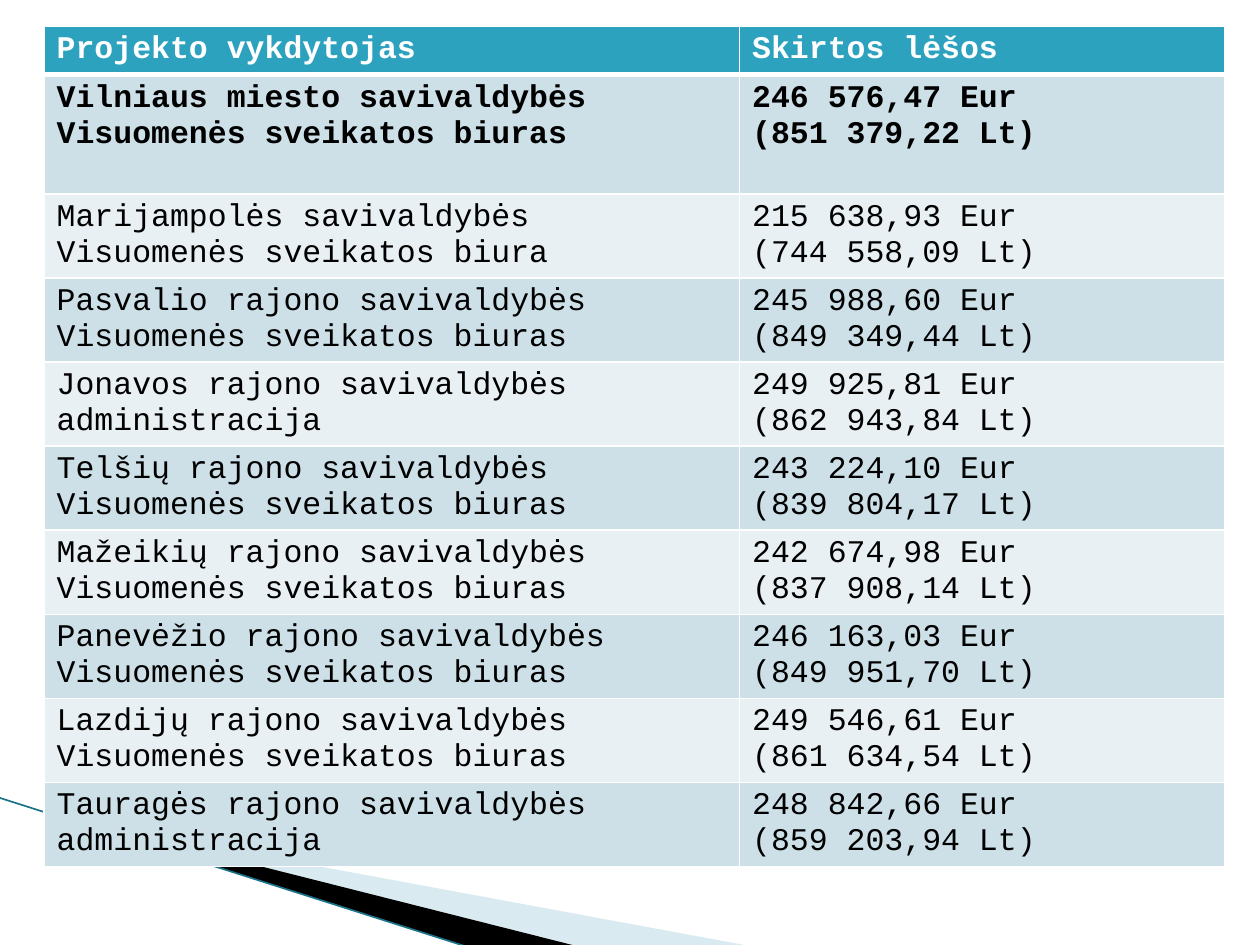
from lxml.etree import SubElement
from pptx import Presentation
from pptx.dml.color import RGBColor
from pptx.enum.shapes import MSO_CONNECTOR as Link
from pptx.oxml.ns import qn
from pptx.util import Inches, Pt

FONT = "Courier New"
HEAD, BANDS = "2DA2BF", ("CDE0E8", "E8F0F4")
WHITE, BLACK, PALE, TEAL = "FFFFFF", "000000", "A0CBDC", "1B7389"
BUREAU = "Visuomenės sveikatos biuras"

ROWS = [
    ("Projekto vykdytojas", "Skirtos lėšos"),
    (f"Vilniaus miesto savivaldybės \v{BUREAU}", "246 576,47 Eur\n(851 379,22 Lt)"),
    ("Marijampolės savivaldybės Visuomenės sveikatos biura",
     "215 638,93 Eur\n(744 558,09 Lt)"),
    (f"Pasvalio rajono savivaldybės {BUREAU}", "245 988,60 Eur\n(849 349,44 Lt)"),
    ("Jonavos rajono savivaldybės administracija", "249 925,81 Eur\n(862 943,84 Lt)"),
    (f"Telšių rajono savivaldybės\n{BUREAU}", "243 224,10 Eur\n(839 804,17 Lt)"),
    (f"Mažeikių rajono savivaldybės {BUREAU}", "242 674,98 Eur\n(837 908,14 Lt)"),
    (f"Panevėžio rajono savivaldybės {BUREAU}", "246 163,03 Eur\n(849 951,70 Lt)"),
    (f"Lazdijų rajono savivaldybės {BUREAU}", "249 546,61 Eur\n(861 634,54 Lt)"),
    ("Tauragės rajono savivaldybės administracija", "248 842,66 Eur\n(859 203,94 Lt)"),
]


def rgb(code):
    return RGBColor.from_string(code)


def write(frame, text, size=18, color=BLACK, bold=False):
    frame.text = text
    for para in frame.paragraphs:
        for run in para.runs:
            font = run.font
            font.name, font.size, font.bold = FONT, Pt(size), bold
            font.color.rgb = rgb(color)


def edge(cell, side, width):
    """Draw a white border on one side (L, R, T or B) of a cell."""
    props = cell._tc.get_or_add_tcPr()
    line = SubElement(props, qn(f"a:ln{side}"), w=str(Pt(width)))
    fill = SubElement(line, qn("a:solidFill"))
    SubElement(fill, qn("a:srgbClr"), val=WHITE)


class Page:
    """The current slide; lengths are percentages of its width and height."""

    def __init__(self, deck):
        self.wide, self.high = deck.slide_width, deck.slide_height
        self.slide = deck.slides.add_slide(deck.slide_layouts[6])
        self.shapes = self.slide.shapes
        back = self.slide.background.fill
        back.solid()
        back.fore_color.rgb = rgb(WHITE)

    def x(self, share):
        return round(self.wide * share / 100)

    def y(self, share):
        return round(self.high * share / 100)

    def wedge(self, points, color, alpha=100):
        spots = [(self.x(a), self.y(b)) for a, b in points]
        pen = self.shapes.build_freeform(*spots[0], scale=1.0)
        pen.add_line_segments(spots[1:], close=True)
        shape = pen.convert_to_shape()
        shape.shadow.inherit = False
        shape.line.fill.background()
        shape.fill.solid()
        shape.fill.fore_color.rgb = rgb(color)
        if alpha < 100:
            tone = shape._element.spPr.find(".//" + qn("a:srgbClr"))
            SubElement(tone, qn("a:alpha"), val=str(alpha * 1000))

    def line(self, start, end, color, width):
        link = self.shapes.add_connector(
            Link.STRAIGHT, self.x(start[0]), self.y(start[1]),
            self.x(end[0]), self.y(end[1]))
        link.line.color.rgb = rgb(color)
        link.line.width = Pt(width)
        SubElement(link._element.spPr, qn("a:effectLst"))

    def table(self, left, top, cols, highs, rows):
        grid = self.shapes.add_table(
            len(rows), len(cols), self.x(left), self.y(top),
            self.x(sum(cols)), self.y(sum(highs))).table
        for col, share in zip(grid.columns, cols):
            col.width = self.x(share)
        for r, (row, share) in enumerate(zip(rows, highs)):
            grid.rows[r].height = self.y(share)
            for c, text in enumerate(row):
                self.cell(grid.cell(r, c), text, r)

    def cell(self, cell, text, row):
        head = row == 0
        for side in "LRTB":
            thick = (head and side == "B") or (row == 1 and side == "T")
            edge(cell, side, 3 if thick else 1)
        cell.fill.solid()
        cell.fill.fore_color.rgb = rgb(HEAD if head else BANDS[(row - 1) % 2])
        write(cell.text_frame, text, color=WHITE if head else BLACK, bold=row < 2)


def main():
    deck = Presentation()
    deck.slide_width, deck.slide_height = Inches(10), Inches(7.5)
    page = Page(deck)
    page.wedge([(5.5, 86.8), (59.5, 100.1), (45.6, 100.1), (5.5, 86.7)], PALE, 40)
    page.wedge([(5.3, 86.5), (45.7, 100.1), (37.2, 100.2), (5.4, 86.7)], BLACK)
    page.line((-0.1, 84.4), (37.1, 100.2), TEAL, 0.95)
    page.table(3.5, 2.8, (55.2, 38.5), [5.1, 12.6] + [8.9] * 8, ROWS)
    deck.save("out.pptx")


if __name__ == "__main__":
    main()
